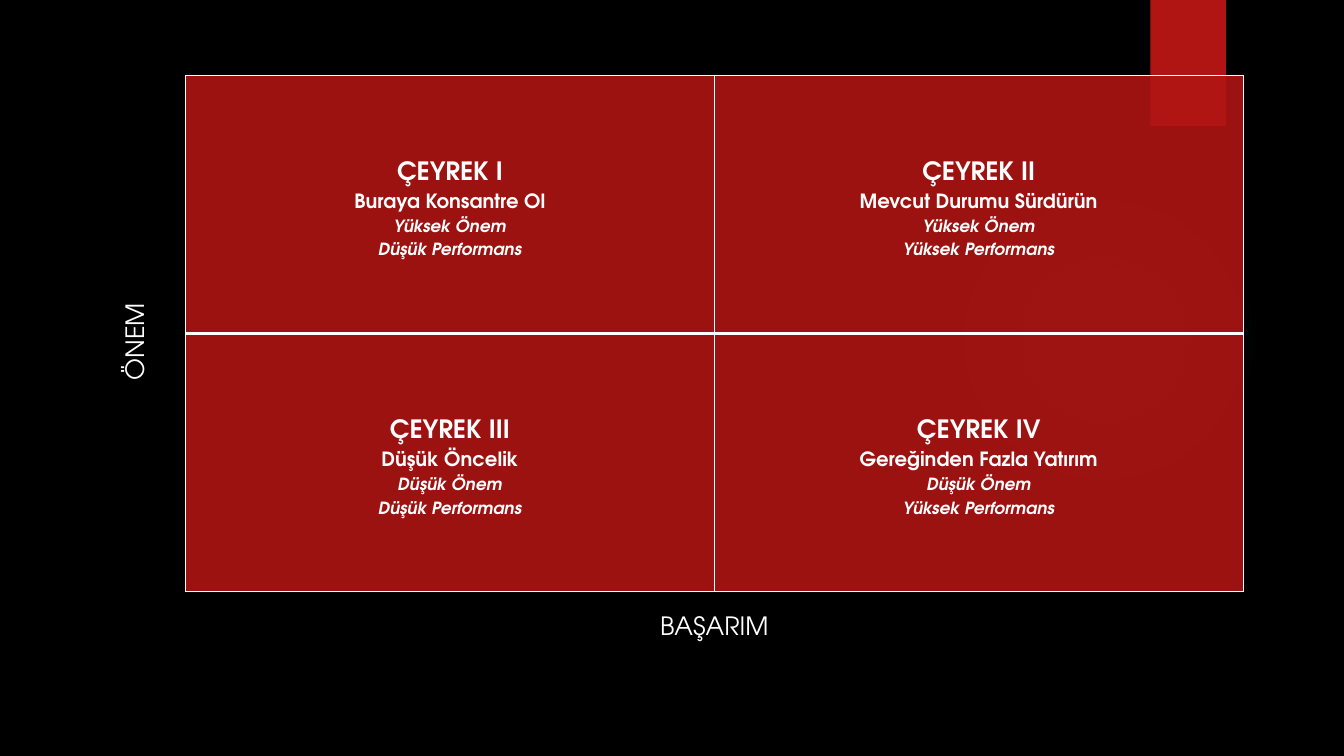
"""Draw an importance and performance grid with four quadrants."""
from dataclasses import dataclass

from lxml import etree
from pptx import Presentation
from pptx import util as u
from pptx.dml.color import RGBColor
from pptx.enum import shapes, text
from pptx.oxml import parse_xml
from pptx.oxml.ns import nsdecls, qn

FONT = "TeX Gyre Adventor"
WHITE, RED, TEAL = "FFFFFF", "B01513", "50B9C1"
ROWS = COLS = 2


@dataclass(frozen=True)
class Box:
    left: float
    top: float
    width: float
    height: float

    def place(self) -> tuple:
        return tuple(u.Inches(n) for n in (self.left, self.top, self.width, self.height))


@dataclass(frozen=True)
class Label:
    words: str
    box: Box
    turned: bool = False


@dataclass(frozen=True)
class Quadrant:
    title: str
    advice: str
    weight: str
    result: str

    def lines(self) -> tuple:
        return (
            (self.title, 18, False),
            (self.advice, 14, False),
            (self.weight, 12, True),
            (self.result, 12, True),
        )


QUADRANTS = (
    Quadrant("ÇEYREK I", "Buraya Konsantre Ol", "Yüksek Önem", "Düşük Performans"),
    Quadrant("ÇEYREK II", "Mevcut Durumu Sürdürün", "Yüksek Önem", "Yüksek Performans"),
    Quadrant("ÇEYREK III", "Düşük Öncelik", "Düşük Önem", "Düşük Performans"),
    Quadrant("ÇEYREK IV", "Gereğinden Fazla Yatırım", "Düşük Önem", "Yüksek Performans"),
)
LABELS = (
    Label("ÖNEM", Box(1.13, 1.01, 0.5, 4.76), True),
    Label("BAŞARIM", Box(2.01, 6.01, 10.15, 0.4)),
)
GLOW = Box(9.41, 1.83, 3.08, 3.08)
TAB = Box(11.41, 0, 0.75, 1.25)
GRID = Box(1.84, 0.75, 10.49, 5.12)


def paint(fill, code: str) -> None:
    fill.solid()
    fill.fore_color.rgb = RGBColor.from_string(code)


def style(para, size: float, bold: bool = False, slant: bool = False) -> None:
    para.alignment = text.PP_ALIGN.CENTER
    for run in para.runs:
        font = run.font
        font.name, font.size = FONT, u.Pt(size)
        font.bold, font.italic = bold, slant
        font.color.rgb = RGBColor.from_string(WHITE)


def add_form(slide, kind, box: Box):
    form = slide.shapes.add_shape(kind, *box.place())
    form.shadow.inherit = False
    form.line.fill.background()
    return form


def add_glow(slide) -> None:
    form = add_form(slide, shapes.MSO_SHAPE.OVAL, GLOW)
    stops = "".join(
        f'<a:gs pos="{spot * 1000}"><a:srgbClr val="{TEAL}">'
        f'<a:alpha val="{alpha * 1000}"/></a:srgbClr></a:gs>'
        for spot, alpha in ((0, 7), (36, 6), (69, 0))
    )
    grad = parse_xml(
        f'<a:gradFill {nsdecls("a")}><a:gsLst>{stops}</a:gsLst><a:path path="circle">'
        '<a:fillToRect l="50000" t="50000" r="50000" b="50000"/></a:path></a:gradFill>'
    )
    form.element.spPr.find(qn("a:prstGeom")).addnext(grad)


def add_tab(slide) -> None:
    form = add_form(slide, shapes.MSO_SHAPE.RECTANGLE, TAB)
    paint(form.fill, RED)
    shade = parse_xml(
        f'<a:outerShdw {nsdecls("a")} blurRad="{u.Pt(3)}" dist="{u.Pt(2)}" dir="5400000">'
        '<a:srgbClr val="000000"><a:alpha val="45000"/></a:srgbClr></a:outerShdw>'
    )
    form.element.spPr.find(qn("a:effectLst")).append(shade)


def add_edge(props, side: str, width: float) -> None:
    props.append(parse_xml(
        f'<a:ln{side} {nsdecls("a")} w="{u.Pt(width)}"><a:solidFill>'
        f'<a:srgbClr val="{WHITE}"/></a:solidFill></a:ln{side}>'
    ))


def fill_cell(cell, quad: Quadrant, row: int) -> None:
    cell.vertical_anchor = text.MSO_ANCHOR.MIDDLE
    cell.margin_left = cell.margin_right = u.Inches(0.07)
    cell.margin_top = cell.margin_bottom = 0
    lines = quad.lines()
    cell.text_frame.text = "\n".join(words for words, _, _ in lines)
    for para, (_, size, slant) in zip(cell.text_frame.paragraphs, lines):
        para.line_spacing = 1.5
        style(para, size, True, slant)
    props = cell._tc.get_or_add_tcPr()
    inner = "B" if row == 0 else "T"
    for side in "LRTB":
        add_edge(props, side, 3 if side == inner else 1)
    paint(cell.fill, RED)
    tint = props.find(qn("a:solidFill"))[0]
    etree.SubElement(tint, qn("a:alpha")).set("val", "89000")


def add_grid(slide) -> None:
    table = slide.shapes.add_table(ROWS, COLS, *GRID.place()).table
    table.first_row = table.horz_banding = False
    for row in table.rows:
        row.height = u.Inches(GRID.height / ROWS)
    for col in table.columns:
        col.width = u.Inches(GRID.width / COLS)
    for spot, quad in enumerate(QUADRANTS):
        row, col = divmod(spot, COLS)
        fill_cell(table.cell(row, col), quad, row)


def add_label(slide, label: Label) -> None:
    frame = slide.shapes.add_textbox(*label.box.place()).text_frame
    frame.word_wrap = True
    frame.auto_size = text.MSO_AUTO_SIZE.SHAPE_TO_FIT_TEXT
    if label.turned:
        frame._txBody.bodyPr.set("vert", "vert270")
    frame.text = label.words
    style(frame.paragraphs[0], 18)


def main() -> None:
    deck = Presentation()
    deck.slide_width, deck.slide_height = u.Inches(13.33), u.Inches(7.5)
    slide = deck.slides.add_slide(deck.slide_layouts[6])
    paint(slide.background.fill, "000000")
    add_glow(slide)
    add_tab(slide)
    add_grid(slide)
    for label in LABELS:
        add_label(slide, label)
    deck.save("out.pptx")


if __name__ == "__main__":
    main()
